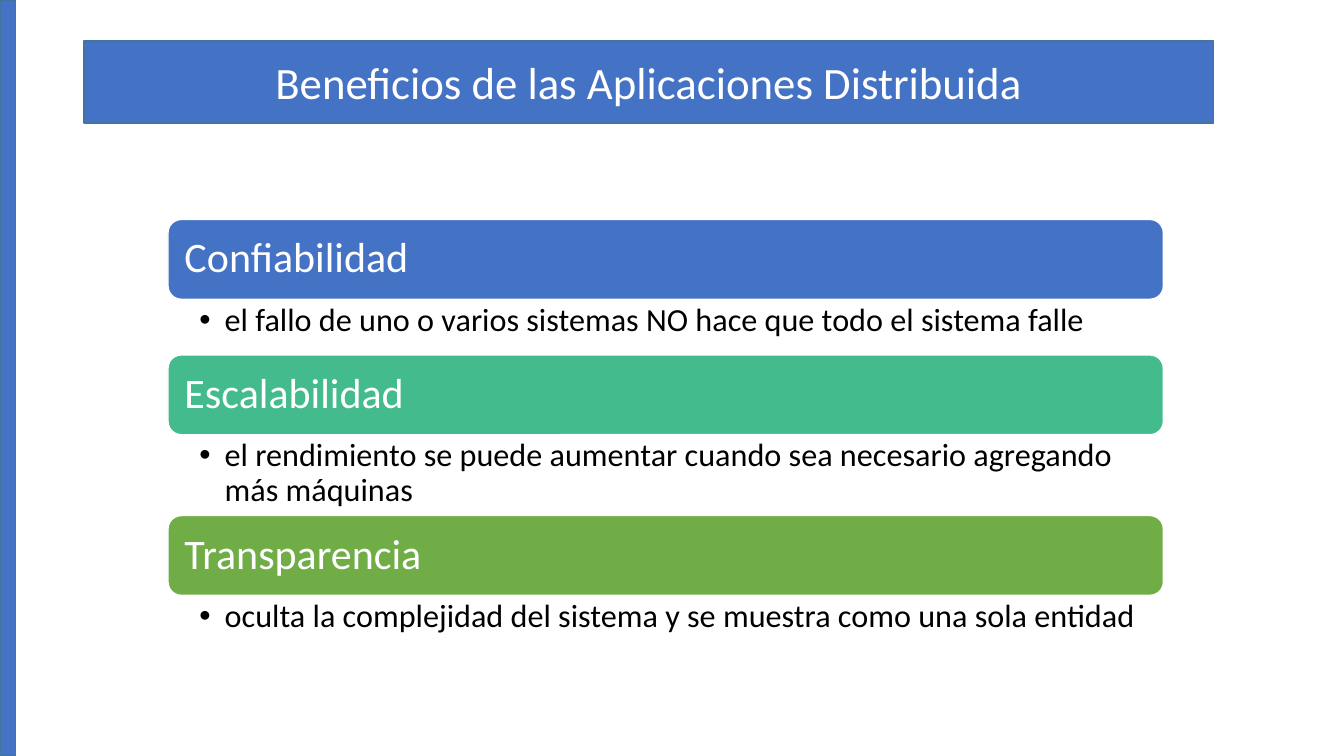
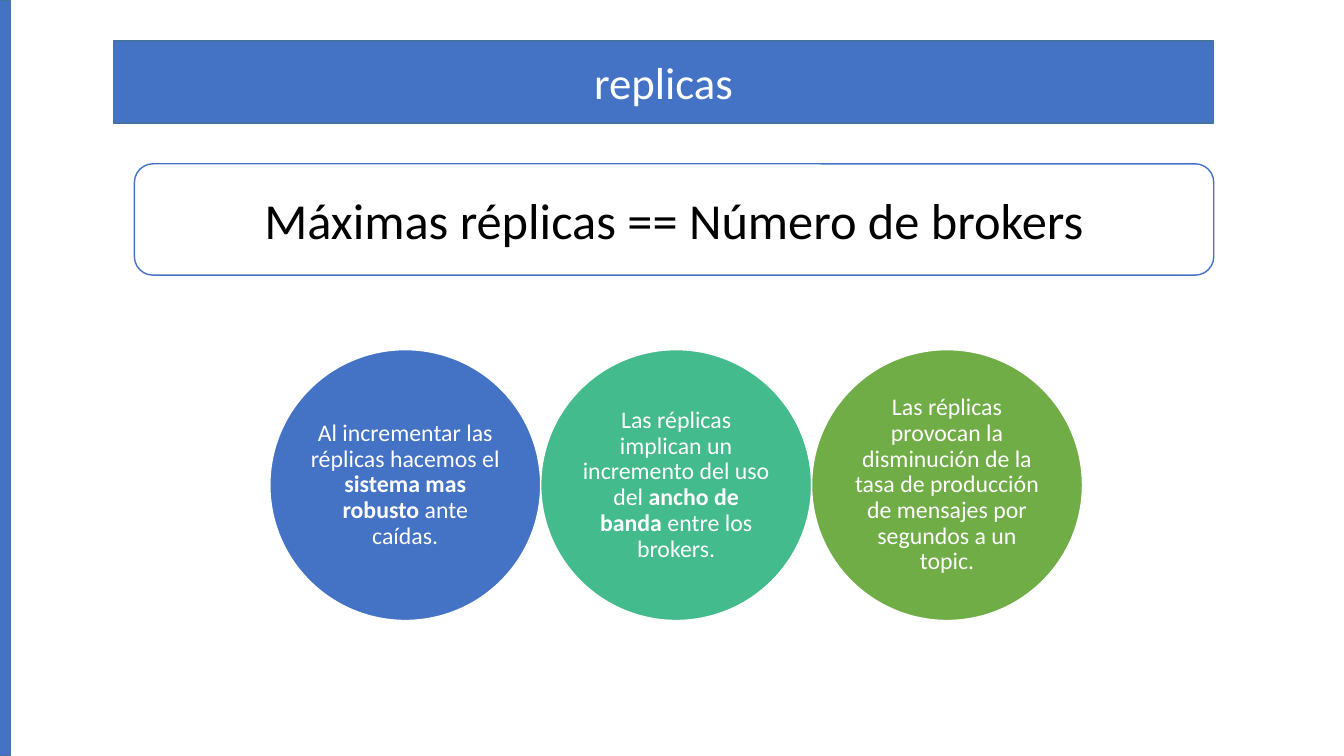
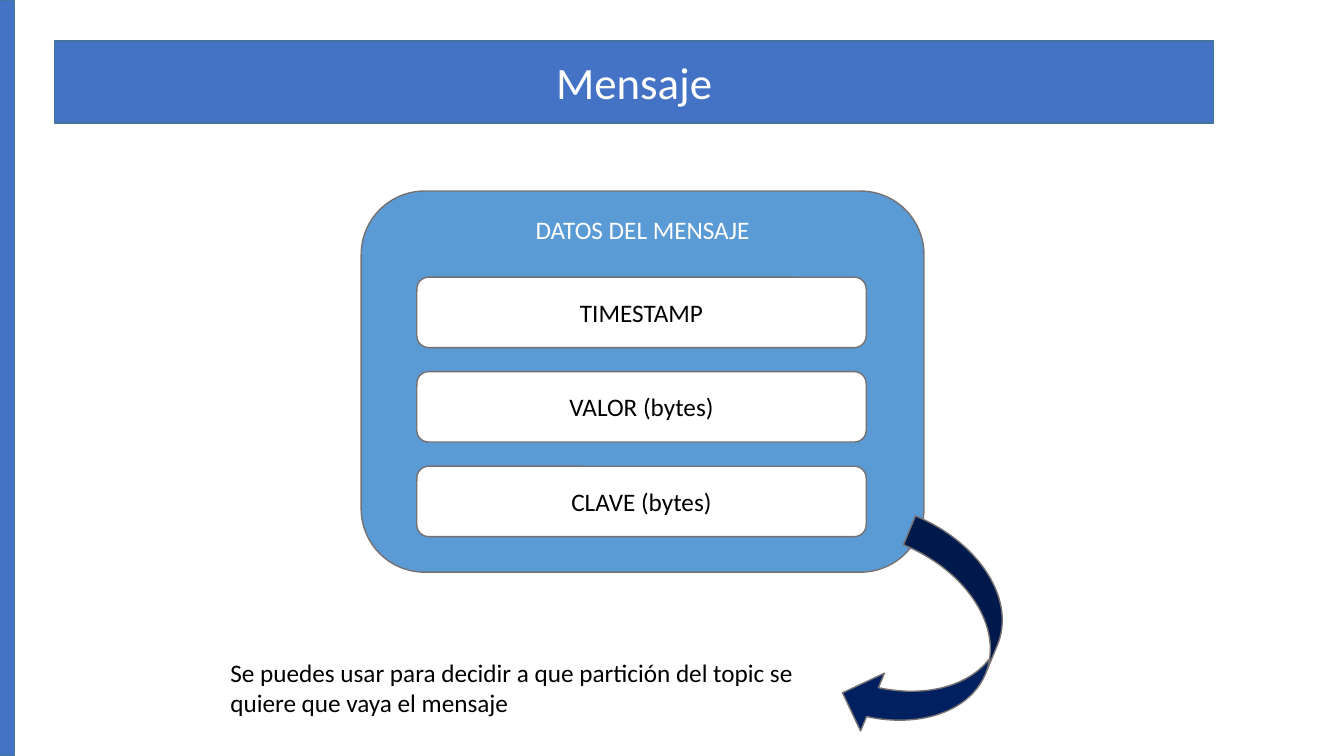
from lxml import etree
from pptx import Presentation
from pptx import util as u
from pptx.dml.color import RGBColor
from pptx.enum import shapes, text
from pptx.oxml.ns import qn

# Colours
BLUE = RGBColor(0x44, 0x72, 0xC4)
STEEL = RGBColor(0x43, 0x73, 0x9E)
TEAL = RGBColor(0x43, 0xBB, 0x8D)
GREEN = RGBColor(0x70, 0xAD, 0x47)
SKY = RGBColor(0x5B, 0x9B, 0xD5)
NAVY = RGBColor(0x00, 0x20, 0x60)
GREY = RGBColor(0x76, 0x71, 0x71)
BLACK = RGBColor(0, 0, 0)
WHITE = RGBColor(0xFF, 0xFF, 0xFF)
ACCENTS = (BLUE, TEAL, GREEN)

# Shared measures, in px
EMU_PER_PX = 9525
WIDTH, HEIGHT = 1280, 720
FONT = "Calibri"
TITLE_TOP, TITLE_RIGHT, TITLE_HEIGHT = 39, 1156, 78
SIDEBAR_WIDTH = 15

ROUND = shapes.MSO_SHAPE.ROUNDED_RECTANGLE
LEFT, CENTER = text.PP_ALIGN.LEFT, text.PP_ALIGN.CENTER
TOP, MIDDLE = text.MSO_ANCHOR.TOP, text.MSO_ANCHOR.MIDDLE

# Content: (heading, detail, height of the detail)
BENEFITS = [
    ("Confiabilidad",
     "el fallo de uno o varios sistemas NO hace que todo el sistema falle", 53),
    ("Escalabilidad",
     "el rendimiento se puede aumentar cuando sea necesario agregando más máquinas", 77),
    ("Transparencia",
     "oculta la complejidad del sistema y se muestra como una sola entidad", 53),
]
# Runs as (text, bold)
REPLICA_EFFECTS = [
    [("Al incrementar las réplicas hacemos el ", False),
     ("sistema mas robusto ", True), ("ante caídas.", False)],
    [("Las réplicas implican un incremento del uso del ", False),
     ("ancho de banda ", True), ("entre los brokers.", False)],
    [("Las réplicas provocan la disminución de la tasa de producción "
      "de mensajes por segundos a un topic.", False)],
]
MESSAGE_FIELDS = ["TIMESTAMP", "VALOR (bytes)", "CLAVE (bytes)"]


def px(value):
    return u.Emu(value * EMU_PER_PX)


def apply(target, values):
    for name, value in values.items():
        setattr(target, name, value)


def paint(shape, fill, line):
    if fill is None:
        shape.fill.background()
    else:
        shape.fill.solid()
        shape.fill.fore_color.rgb = fill
    shape.line.color.rgb = line
    shape.line.width = u.Pt(1)


def write(shape, runs, size, color, align=CENTER, anchor=MIDDLE, spacing=1.0, margins=None):
    """Write one paragraph; margins are left, top, right, bottom in px."""
    frame = shape.text_frame
    apply(frame, {"word_wrap": True, "vertical_anchor": anchor,
                  "auto_size": text.MSO_AUTO_SIZE.NONE})
    if margins:
        sides = ("margin_left", "margin_top", "margin_right", "margin_bottom")
        apply(frame, dict(zip(sides, map(px, margins))))
    paragraph = frame.paragraphs[0]
    apply(paragraph, {"alignment": align, "line_spacing": spacing})
    for words, bold in [(runs, False)] if isinstance(runs, str) else runs:
        run = paragraph.add_run()
        run.text = words
        apply(run.font, {"name": FONT, "size": u.Pt(size), "bold": bold})
        run.font.color.rgb = color
    return paragraph


def add_shape(slide, kind, box, fill, line):
    shape = slide.shapes.add_shape(kind, *map(px, box))
    shape.shadow.inherit = False
    paint(shape, fill, line)
    return shape


def add_text(slide, box):
    return slide.shapes.add_textbox(*map(px, box))


def add_bullet(paragraph, indent):
    properties = paragraph._p.get_or_add_pPr()
    properties.set("marL", str(px(indent)))
    properties.set("indent", str(px(-indent)))
    etree.SubElement(properties, qn("a:buFont")).set("typeface", "Arial")
    etree.SubElement(properties, qn("a:buChar")).set("char", "•")


def add_slide(presentation, title_text, title_left, sidebar_left):
    """Start a slide with the rounded title band and the sidebar."""
    slide = presentation.slides.add_slide(presentation.slide_layouts[5])
    title = slide.shapes.title
    apply(title, {"left": px(title_left), "top": px(TITLE_TOP),
                  "width": px(TITLE_RIGHT - title_left), "height": px(TITLE_HEIGHT)})
    outline = etree.SubElement(title.element.spPr, qn("a:prstGeom"))
    outline.set("prst", "roundRect")
    etree.SubElement(outline, qn("a:avLst"))
    paint(title, BLUE, STEEL)
    write(title, title_text, 32, WHITE)
    add_shape(slide, shapes.MSO_SHAPE.RECTANGLE,
              (sidebar_left, 0, SIDEBAR_WIDTH, HEIGHT), BLUE, STEEL)
    return slide


def build_benefits(presentation):
    slide = add_slide(presentation, "Beneficios de las Aplicaciones Distribuida", 80, 0)
    left, top, width, bar_height = 160, 209, 948, 76
    for (heading, detail, detail_height), color in zip(BENEFITS, ACCENTS):
        bar = add_shape(slide, ROUND, (left, top, width, bar_height), color, WHITE)
        write(bar, heading, 30, WHITE, LEFT, spacing=0.9, margins=(12, 12, 12, 12))
        top += bar_height
        box = add_text(slide, (left, top, width, detail_height))
        paragraph = write(box, detail, 23, BLACK, LEFT, TOP, 0.9, (30, 4, 22, 4))
        add_bullet(paragraph, 24)
        top += detail_height


def build_replicas(presentation):
    slide = add_slide(presentation, "replicas", 108, -5)
    rule = add_shape(slide, ROUND, (128, 156, 1028, 106), None, BLUE)
    write(rule, "Máximas réplicas == Número de brokers", 36, BLACK)
    # Row of touching circles
    left, top, diameter = 257, 333, 258
    for index, (runs, color) in enumerate(zip(REPLICA_EFFECTS, ACCENTS)):
        circle = add_shape(slide, shapes.MSO_SHAPE.OVAL,
                           (left + index * diameter, top, diameter, diameter), color, WHITE)
        write(circle, runs, 17, WHITE, spacing=0.9, margins=(0, 0, 0, 0))


def build_message(presentation):
    slide = add_slide(presentation, "Mensaje", 52, -1)
    card = add_shape(slide, ROUND, (344, 182, 536, 363), SKY, GREY)
    write(card, "DATOS DEL MENSAJE", 18, WHITE, anchor=TOP)
    # Stacked fields inside the card
    for index, field in enumerate(MESSAGE_FIELDS):
        field_box = add_shape(slide, ROUND, (397, 264 + index * 90, 428, 67), WHITE, GREY)
        write(field_box, field, 18, BLACK)
    # Use of the key
    note = add_text(slide, (210, 621, 559, 68))
    write(note, "Se puedes usar para decidir a que partición del topic se quiere "
          "que vaya el mensaje", 18, BLACK, LEFT, TOP)
    arrow = add_shape(slide, shapes.MSO_SHAPE.CURVED_LEFT_ARROW,
                      (827, 506, 119, 212), NAVY, GREY)
    arrow.rotation = 22.4


def main():
    presentation = Presentation()
    apply(presentation, {"slide_width": px(WIDTH), "slide_height": px(HEIGHT)})
    for build in (build_benefits, build_replicas, build_message):
        build(presentation)
    presentation.save("out.pptx")


if __name__ == "__main__":
    main()
